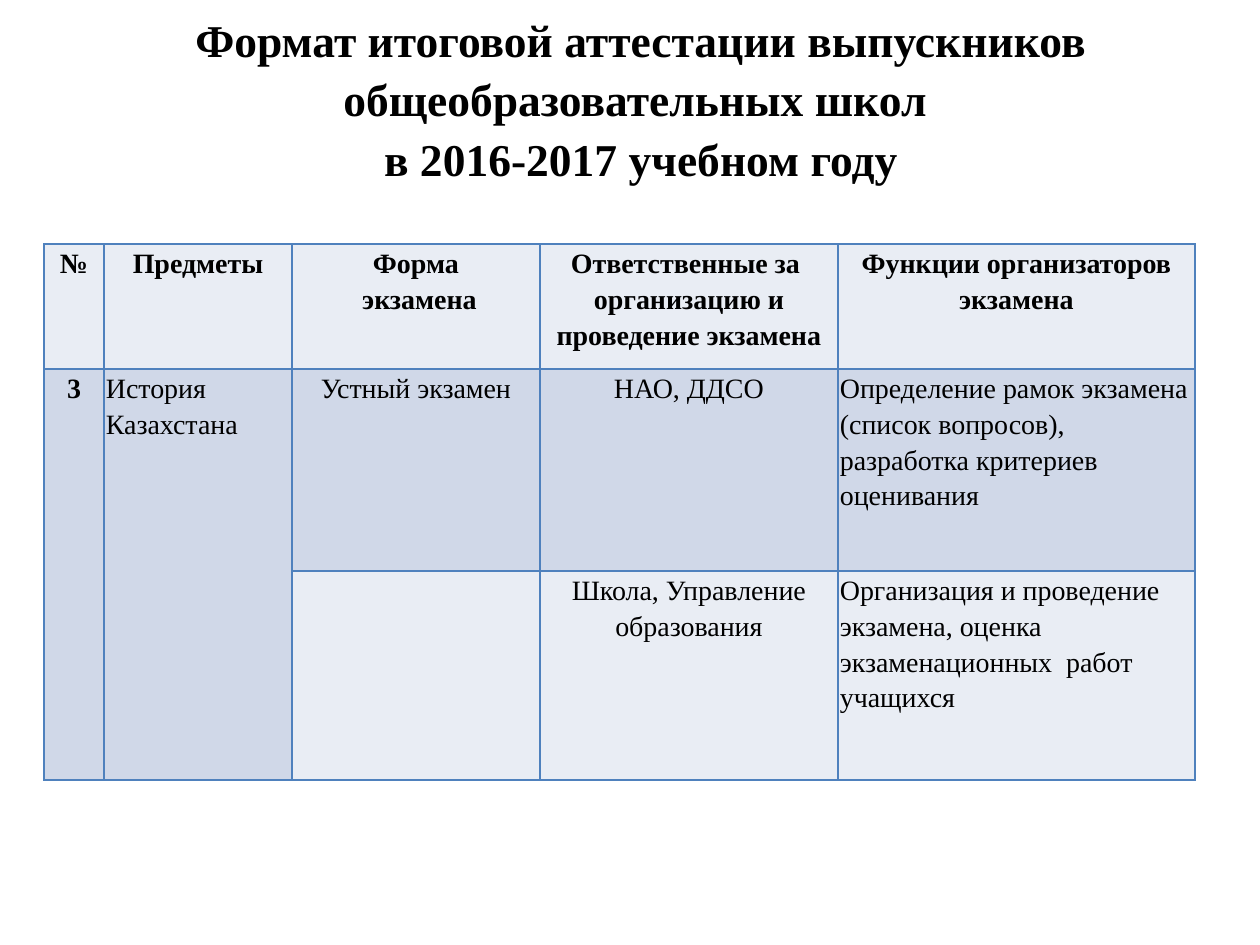
from dataclasses import dataclass

from lxml.etree import SubElement
from pptx import Presentation
from pptx.dml.color import RGBColor
from pptx.enum.text import MSO_ANCHOR as Anchor, PP_ALIGN as Align
from pptx.oxml.ns import qn
from pptx.util import Emu, Pt

PX = 914400 // 126


@dataclass(frozen=True)
class Theme:
    font: str = "Times New Roman"
    ink: str = "000000"
    light: str = "E9EDF4"
    dark: str = "D0D8E8"
    border: str = "4F81BD"
    title_size: int = 26
    table_size: int = 16


@dataclass(frozen=True)
class Entry:
    text: str
    align: Align = Align.CENTER
    bold: bool = False
    fill: str = Theme.light


THEME = Theme()
TITLE = ("Формат итоговой аттестации выпускников общеобразовательных школ "
         "\vв 2016-2017 учебном году")
COLUMNS = (60, 188, 248, 298, 357)
ROWS = (125, 202, 209)
HEADINGS = (
    "№",
    "Предметы",
    "Форма\n экзамена",
    "Ответственные за  организацию и проведение экзамена",
    "Функции организаторов экзамена",
)
ENTRIES = (
    tuple(Entry(heading, bold=True) for heading in HEADINGS),
    (
        Entry("3", bold=True, fill=THEME.dark),
        Entry("История Казахстана", Align.LEFT, fill=THEME.dark),
        Entry("Устный экзамен", fill=THEME.dark),
        Entry("НАО, ДДСО", fill=THEME.dark),
        Entry("Определение рамок экзамена (список вопросов), "
              "разработка критериев оценивания", Align.LEFT, fill=THEME.dark),
    ),
    (
        Entry("", fill=THEME.dark),
        Entry("", fill=THEME.dark),
        Entry(""),
        Entry("Школа, Управление образования"),
        Entry("Организация и проведение экзамена, оценка "
              "экзаменационных  работ учащихся", Align.LEFT),
    ),
)


def px(length: int) -> Emu:
    return Emu(length * PX)


def apply(target, formats: dict) -> None:
    for name, value in formats.items():
        setattr(target, name, value)


def write(frame, text: str, size: int, bold: bool, align: Align, spacing: float) -> None:
    frame.text = text
    for paragraph in frame.paragraphs:
        apply(paragraph, {"alignment": align, "line_spacing": spacing})
        apply(paragraph.font, {"size": Pt(size), "bold": bold})
        for run in paragraph.runs:
            apply(run.font, {"name": THEME.font, "size": Pt(size), "bold": bold})
            run.font.color.rgb = RGBColor.from_string(THEME.ink)


def draw_borders(cell) -> None:
    properties = cell._tc.get_or_add_tcPr()
    for position, side in enumerate(("a:lnL", "a:lnR", "a:lnT", "a:lnB")):
        line = properties.makeelement(qn(side), {"w": str(Pt(1))})
        properties.insert(position, line)
        solid = SubElement(line, qn("a:solidFill"))
        SubElement(solid, qn("a:srgbClr"), val=THEME.border)


def draw_cell(cell, entry: Entry) -> None:
    apply(cell, {"margin_left": px(2), "margin_right": px(2),
                 "margin_top": 0, "margin_bottom": 0})
    cell.fill.solid()
    cell.fill.fore_color.rgb = RGBColor.from_string(entry.fill)
    draw_borders(cell)
    if entry.text:
        write(cell.text_frame, entry.text, THEME.table_size, entry.bold, entry.align, 1.15)


def draw_title(slide) -> None:
    frame = slide.shapes.add_textbox(px(74), px(45), px(1134), px(157)).text_frame
    apply(frame, {"word_wrap": True, "vertical_anchor": Anchor.MIDDLE,
                  "margin_top": 0, "margin_bottom": px(55)})
    write(frame, TITLE, THEME.title_size, True, Align.CENTER, 1.09)


def draw_exam_table(slide) -> None:
    exams = slide.shapes.add_table(len(ROWS), len(COLUMNS), px(44), px(244),
                                   px(sum(COLUMNS)), px(sum(ROWS))).table
    apply(exams, {"first_row": False, "horz_banding": False})
    for column, width in zip(exams.columns, COLUMNS):
        column.width = px(width)
    for row, height, entries in zip(exams.rows, ROWS, ENTRIES):
        row.height = px(height)
        for cell, entry in zip(row.cells, entries):
            draw_cell(cell, entry)
    # Number and subject span both exam rows
    for column in (0, 1):
        exams.cell(1, column).merge(exams.cell(2, column))


def main() -> None:
    deck = Presentation()
    apply(deck, {"slide_width": px(1260), "slide_height": px(945)})
    slide = deck.slides.add_slide(deck.slide_layouts[6])
    draw_title(slide)
    draw_exam_table(slide)
    deck.save("out.pptx")


if __name__ == "__main__":
    main()
